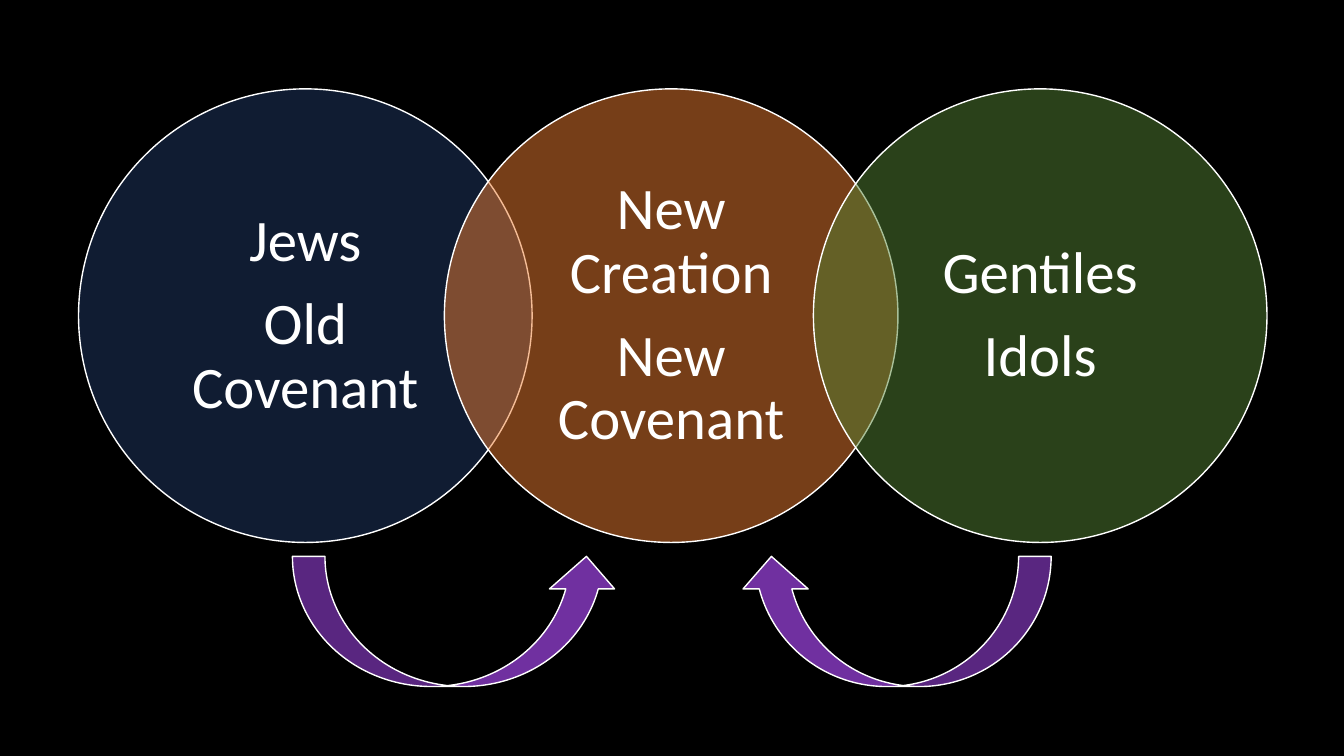
from dataclasses import dataclass

import pptx
import pptx.dml.color
import pptx.enum.shapes
import pptx.enum.text
import pptx.oxml
import pptx.oxml.ns
import pptx.util
from pptx.enum.shapes import MSO_SHAPE
from pptx.shapes.autoshape import Shape
from pptx.slide import Slide
from pptx.util import Cm


@dataclass(frozen=True)
class Theme:
    background: str = "000000"
    white: str = "FFFFFF"
    navy: str = "203864"
    orange: str = "ED7D31"
    green: str = "548235"
    purple: str = "7030A0"
    font: str = "Calibri"
    text_size: float = 42
    line_width: float = 1
    circle_opacity: int = 50


@dataclass(frozen=True)
class Circle:
    left: float
    color: str
    lines: tuple[str, ...]


@dataclass(frozen=True)
class Arrow:
    left: float
    width: float
    preset: MSO_SHAPE
    rotation: float


THEME = Theme()
CIRCLE_TOP = 2.24
CIRCLE_SIZE = 11.43
ARROW_TOP = 14.02
ARROW_HEIGHT = 3.28

CIRCLES = (
    Circle(1.98, THEME.navy, ("Jews", "Old Covenant")),
    Circle(11.2, THEME.orange, ("New Creation", "New Covenant")),
    Circle(20.5, THEME.green, ("Gentiles", "Idols")),
)
ARROWS = (
    Arrow(7.37, 8.23, MSO_SHAPE.CURVED_UP_ARROW, 0),
    Arrow(18.62, 7.87, MSO_SHAPE.CURVED_DOWN_ARROW, 180),
)


def rgb(color: str) -> pptx.dml.color.RGBColor:
    return pptx.dml.color.RGBColor.from_string(color)


def add_outlined_shape(s: Slide, preset: MSO_SHAPE, left: float, top: float,
                       width: float, height: float, color: str) -> Shape:
    sp = s.shapes.add_shape(preset, Cm(left), Cm(top), Cm(width), Cm(height))
    sp.shadow.inherit = False
    sp.fill.solid()
    sp.fill.fore_color.rgb = rgb(color)
    sp.line.color.rgb = rgb(THEME.white)
    sp.line.width = pptx.util.Pt(THEME.line_width)
    return sp


def set_opacity(sp: Shape, percent: int) -> None:
    fill = sp._element.spPr.find(pptx.oxml.ns.qn("a:solidFill"))
    alpha = pptx.oxml.parse_xml(
        f'<a:alpha {pptx.oxml.ns.nsdecls("a")} val="{percent * 1000}"/>'
    )
    fill[0].append(alpha)


def draw_circle(s: Slide, circle: Circle) -> None:
    sp = add_outlined_shape(s, MSO_SHAPE.OVAL, circle.left, CIRCLE_TOP,
                            CIRCLE_SIZE, CIRCLE_SIZE, circle.color)
    set_opacity(sp, THEME.circle_opacity)
    tf = sp.text_frame
    tf.word_wrap = True
    tf.vertical_anchor = pptx.enum.text.MSO_ANCHOR.MIDDLE
    tf.margin_left = tf.margin_right = tf.margin_top = tf.margin_bottom = Cm(0.43)
    tf.text = "\n".join(circle.lines)
    for p in tf.paragraphs:
        p.alignment = pptx.enum.text.PP_ALIGN.CENTER
        p.line_spacing = 0.9
        p.space_after = pptx.util.Pt(14)
        p.font.name = THEME.font
        p.font.size = pptx.util.Pt(THEME.text_size)
        p.font.color.rgb = rgb(THEME.white)


def draw_arrow(s: Slide, arrow: Arrow) -> None:
    sp = add_outlined_shape(s, arrow.preset, arrow.left, ARROW_TOP,
                            arrow.width, ARROW_HEIGHT, THEME.purple)
    sp.rotation = arrow.rotation


def main() -> None:
    prs = pptx.Presentation()
    prs.slide_width, prs.slide_height = Cm(33.87), Cm(19.05)
    s = prs.slides.add_slide(prs.slide_layouts[6])
    s.background.fill.solid()
    s.background.fill.fore_color.rgb = rgb(THEME.background)
    for circle in CIRCLES:
        draw_circle(s, circle)
    for arrow in ARROWS:
        draw_arrow(s, arrow)
    prs.save("out.pptx")


if __name__ == "__main__":
    main()
